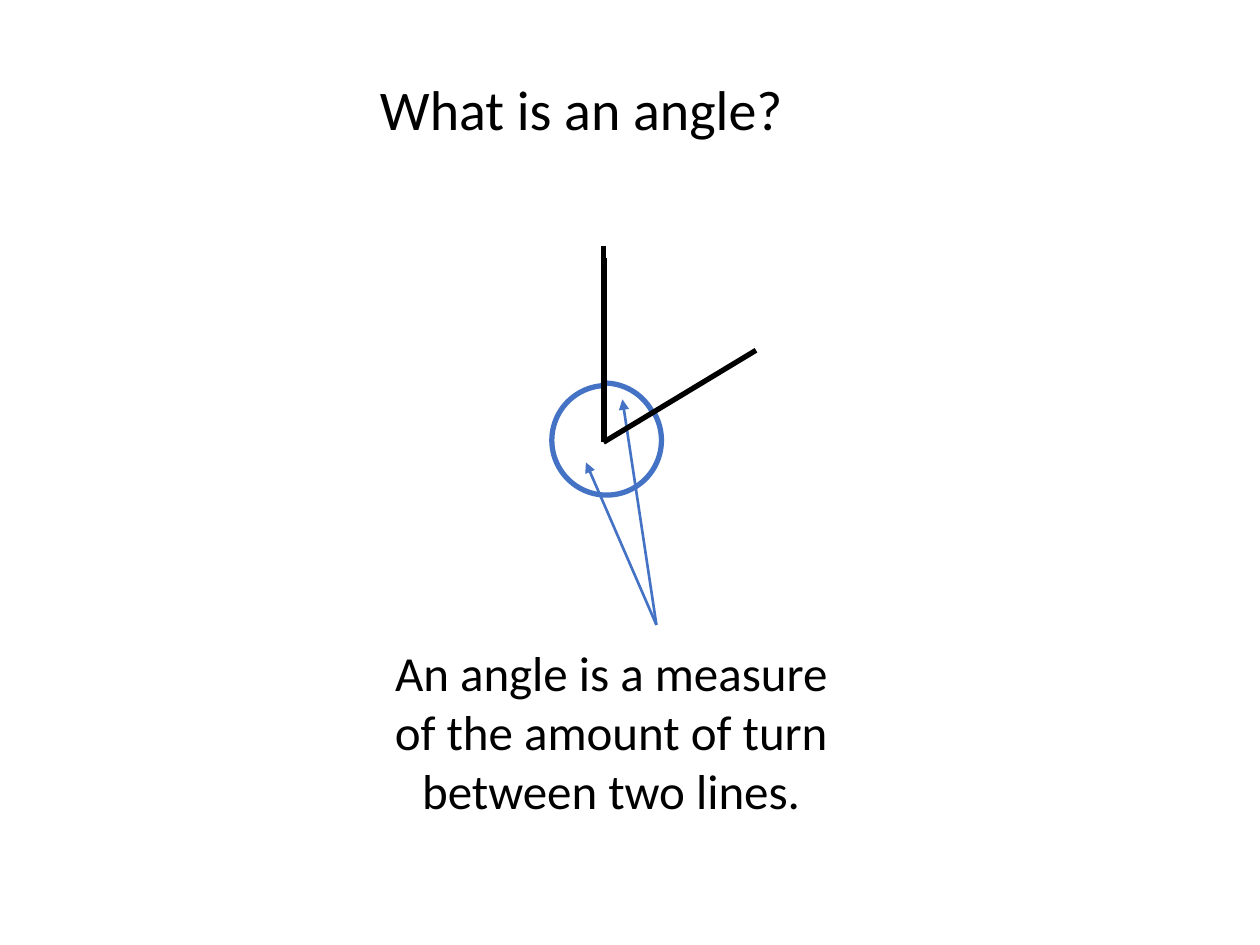
from typing import NamedTuple

from lxml.etree import SubElement
from pptx import Presentation
from pptx.dml.color import RGBColor
from pptx.enum.shapes import MSO_CONNECTOR, MSO_SHAPE
from pptx.enum.text import MSO_AUTO_SIZE, PP_ALIGN
from pptx.oxml.ns import qn
from pptx.slide import Slide
from pptx.util import Inches, Pt

BLACK = "000000"
BLUE = "4472C4"
FONT = "Calibri"


class Line(NamedTuple):
    start: tuple[float, float]
    end: tuple[float, float]
    color: str = BLACK
    width: float = 3
    arrow: bool = False


class Arc(NamedTuple):
    left: float
    top: float
    start: float
    end: float


ARC_SIZE = 0.87
VERTEX = (4.79, 3.51)
POINTER_START = (5.21, 4.96)

# Arc ends are in units of 100000 sixtieths of a thousandth of a degree
ARCS = [Arc(4.36, 3.04, 162, 198.46), Arc(4.38, 3.06, 197.59, 160.82)]
ANGLE_ARMS = [
    Line((4.8, 3.51), (4.8, 2.05)),
    Line(VERTEX, (6, 2.78)),
    Line(VERTEX, (4.79, 2.06)),
    Line((4.79, 1.95), VERTEX),
]
POINTERS = [
    Line(POINTER_START, end, BLUE, 1.5, arrow=True)
    for end in [(4.94, 3.17), (4.65, 3.67)]
]


def rgb(color: str) -> RGBColor:
    return RGBColor.from_string(color)


def add_text(slide: Slide, text: str, *, left: float, top: float,
             width: float, height: float, size: float) -> None:
    shape = slide.shapes.add_textbox(
        Inches(left), Inches(top), Inches(width), Inches(height))
    frame = shape.text_frame
    frame.word_wrap = True
    frame.auto_size = MSO_AUTO_SIZE.SHAPE_TO_FIT_TEXT
    paragraph = frame.paragraphs[0]
    paragraph.alignment = PP_ALIGN.CENTER
    run = paragraph.add_run()
    run.text = text
    run.font.name = FONT
    run.font.size = Pt(size)
    run.font.color.rgb = rgb(BLACK)


def add_line(slide: Slide, line: Line) -> None:
    connector = slide.shapes.add_connector(
        MSO_CONNECTOR.STRAIGHT,
        *(Inches(length) for length in line.start + line.end))
    connector.line.color.rgb = rgb(line.color)
    connector.line.width = Pt(line.width)
    if line.arrow:
        outline = connector.line._get_or_add_ln()
        SubElement(outline, qn("a:tailEnd"), type="triangle")
    SubElement(connector._element.spPr, qn("a:effectLst"))


def add_arc(slide: Slide, arc: Arc) -> None:
    shape = slide.shapes.add_shape(
        MSO_SHAPE.ARC, Inches(arc.left), Inches(arc.top),
        Inches(ARC_SIZE), Inches(ARC_SIZE))
    shape.adjustments[0] = arc.start
    shape.adjustments[1] = arc.end
    shape.shadow.inherit = False
    shape.fill.background()
    shape.line.color.rgb = rgb(BLUE)
    shape.line.width = Pt(3)


def main() -> None:
    presentation = Presentation()
    presentation.slide_width = Inches(10)
    presentation.slide_height = Inches(7.5)
    slide = presentation.slides.add_slide(presentation.slide_layouts[6])

    # Question and definition
    add_text(slide, "What is an angle?",
             left=0.77, top=0.54, width=7.69, height=0.64, size=32)
    add_text(slide,
             "An angle is a measure of the amount of turn between two lines.",
             left=2.99, top=5.05, width=3.72, height=1.51, size=28)

    # The two turns, with the arms of the angle and pointers over them
    for arc in ARCS:
        add_arc(slide, arc)
    for line in POINTERS + ANGLE_ARMS:
        add_line(slide, line)

    presentation.save("out.pptx")


if __name__ == "__main__":
    main()
